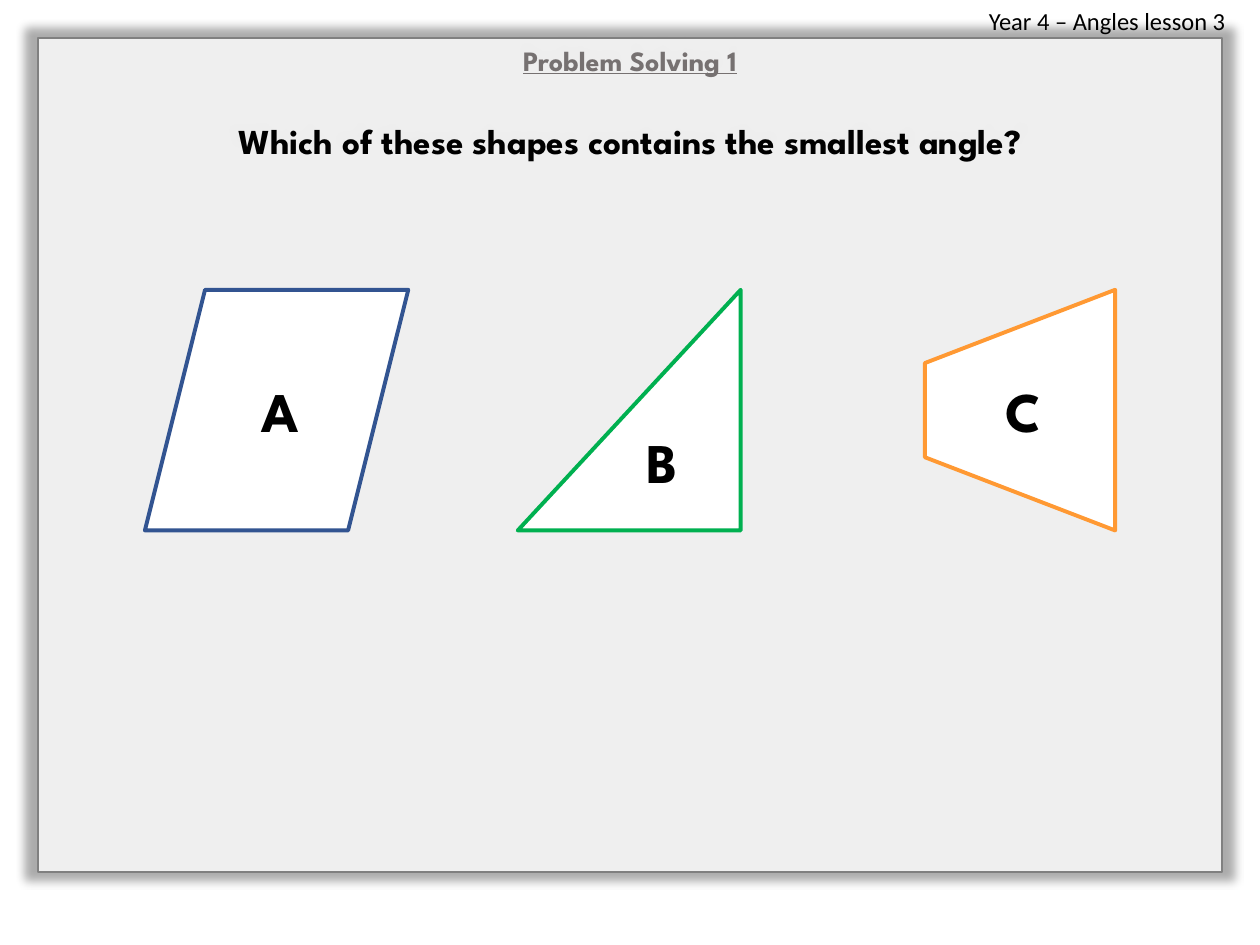
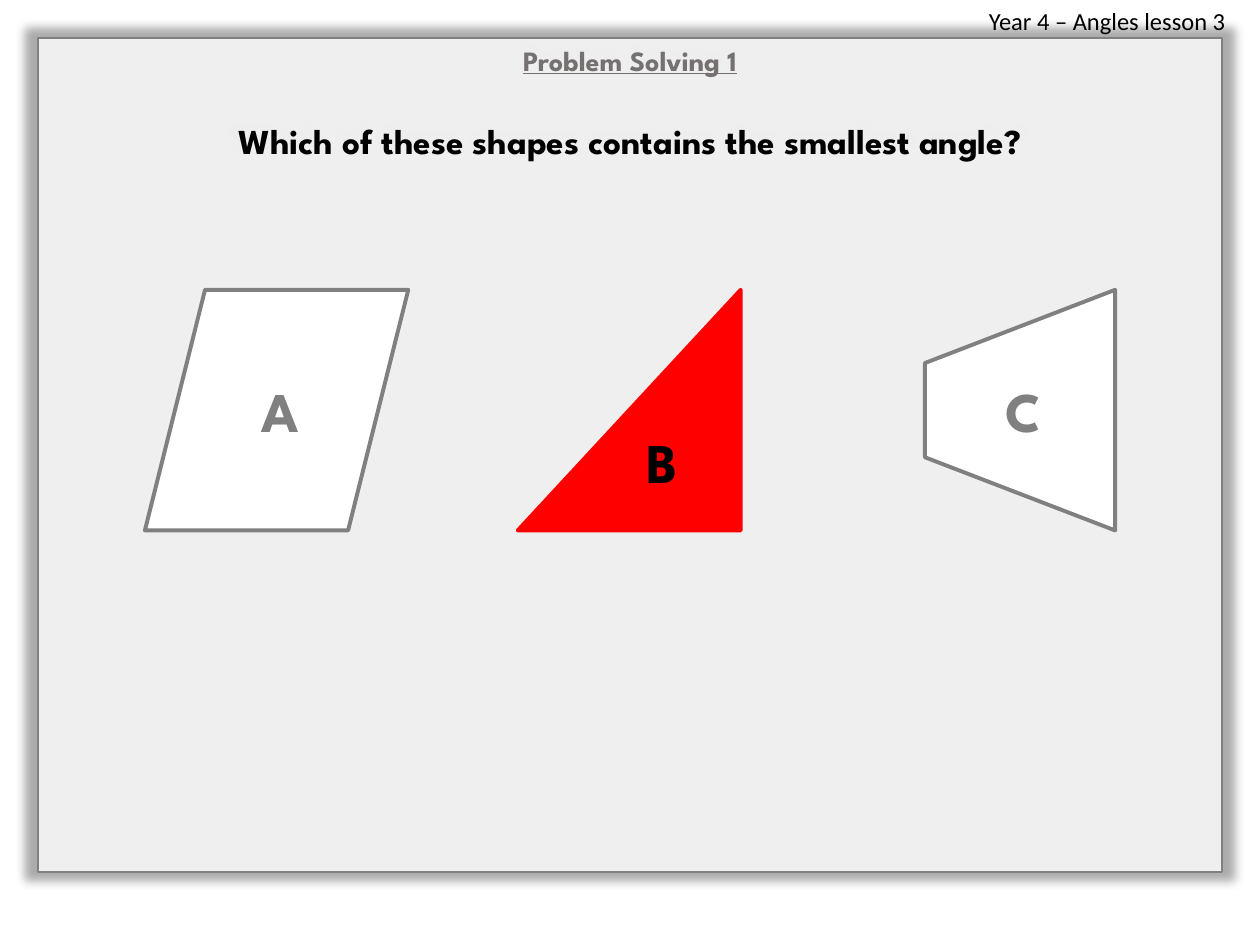
"""Build two angle slides: the question and its highlighted answer."""
import dataclasses

import pptx
import pptx.dml.color
import pptx.enum.dml
import pptx.enum.shapes
import pptx.enum.text
import pptx.oxml
import pptx.oxml.ns
import pptx.util

Pt = pptx.util.Pt
Kind = pptx.enum.shapes.MSO_SHAPE
Align = pptx.enum.text.PP_ALIGN
Anchor = pptx.enum.text.MSO_ANCHOR

LESSON = "Year 4 – Angles lesson 3"
TITLE = "Problem Solving 1"
QUESTION = "Which of these shapes contains the smallest angle?"


@dataclasses.dataclass(frozen=True)
class Theme:
    heading_font: str = "League Spartan"
    lesson_font: str = "Calibri"
    lesson_size: int = 14
    title_size: int = 16
    question_size: int = 20
    letter_size: int = 32
    black: str = "000000"
    white: str = "FFFFFF"
    grey: str = "808080"
    title_grey: str = "767171"
    blue: str = "325491"
    green: str = "00B050"
    orange: str = "FF9933"
    red: str = "FF0000"


@dataclasses.dataclass(frozen=True)
class Figure:
    letter: str
    kind: Kind
    left: float
    width: float
    letter_shift: tuple = (0, 0)
    rotation: int = 0
    flipped: bool = False
    adjustment: float | None = None


THEME = Theme()
FIGURES = [
    Figure("A", Kind.PARALLELOGRAM, 82.8, 150.5),
    Figure("B", Kind.RIGHT_TRIANGLE, 295.9, 127.4, letter_shift=(18, 29), flipped=True),
    Figure("C", Kind.TRAPEZOID, 528.5, 108.7, rotation=270, adjustment=0.385),
]
MUTED = (THEME.white, THEME.grey, THEME.grey)
SLIDES = [
    {
        "A": (THEME.white, THEME.blue, THEME.black),
        "B": (THEME.white, THEME.green, THEME.black),
        "C": (THEME.white, THEME.orange, THEME.black),
    },
    {"A": MUTED, "B": (THEME.red, THEME.red, THEME.black), "C": MUTED},
]

SLIDE_SIZE = (720, 540)
PANEL_BOX = (21.6, 21.6, 676.8, 476.6)
LESSON_BOX = (558, 0, 155.5, 24.5)
FIGURE_TOP, FIGURE_HEIGHT = 165.6, 137.5
LETTER_WIDTH, LETTER_HEIGHT = 31, 46
OUTLINE_WIDTH = 2.25
QUESTION_GAP = 24

SHADOW = (
    f'<a:effectLst {pptx.oxml.ns.nsdecls("a")}>'
    '<a:outerShdw blurRad="63500" sx="102000" sy="102000" algn="ctr" rotWithShape="0">'
    '<a:srgbClr val="000000"><a:alpha val="40000"/></a:srgbClr>'
    "</a:outerShdw></a:effectLst>"
)


def rgb(colour):
    return pptx.dml.color.RGBColor.from_string(colour)


def style(paragraph, text, font, size, colour, bold=True, underline=False, align=Align.CENTER):
    paragraph.text = text
    paragraph.alignment = align
    paragraph.font.name = font
    paragraph.font.size = Pt(size)
    paragraph.font.color.rgb = rgb(colour)
    paragraph.font.bold = bold
    paragraph.font.underline = underline


def add_shape(shapes, kind, box, fill, line, line_width):
    shape = shapes.add_shape(kind, *map(Pt, box))
    shape.shadow.inherit = False
    shape.fill.solid()
    shape.fill.fore_color.rgb = rgb(fill)
    shape.line.color.rgb = rgb(line)
    shape.line.width = Pt(line_width)
    return shape


def add_lesson(slide):
    frame = slide.shapes.add_textbox(*map(Pt, LESSON_BOX)).text_frame
    frame.word_wrap = True
    style(frame.paragraphs[0], LESSON, THEME.lesson_font, THEME.lesson_size,
          THEME.black, bold=False, align=Align.LEFT)


def add_panel(slide):
    panel = add_shape(slide.shapes, Kind.RECTANGLE, PANEL_BOX, THEME.white, THEME.grey, 1)
    colour = panel.element.spPr.find(".//" + pptx.oxml.ns.qn("a:srgbClr"))
    colour.append(pptx.oxml.parse_xml(f'<a:alpha {pptx.oxml.ns.nsdecls("a")} val="82000"/>'))
    effects = panel.element.spPr.find(pptx.oxml.ns.qn("a:effectLst"))
    panel.element.spPr.replace(effects, pptx.oxml.parse_xml(SHADOW))
    frame = panel.text_frame
    frame.word_wrap = True
    frame.vertical_anchor = Anchor.TOP
    style(frame.paragraphs[0], TITLE, THEME.heading_font, THEME.title_size,
          THEME.title_grey, underline=True)
    question = frame.add_paragraph()
    style(question, QUESTION, THEME.heading_font, THEME.question_size, THEME.black)
    question.space_before = Pt(QUESTION_GAP)


def add_figure(slide, figure, colours):
    fill, line, letter_colour = colours
    centre_x = figure.left + figure.width / 2
    centre_y = FIGURE_TOP + FIGURE_HEIGHT / 2
    width, height = figure.width, FIGURE_HEIGHT
    if figure.rotation % 180:
        width, height = height, width
    shapes = slide.shapes.add_group_shape().shapes
    box = (centre_x - width / 2, centre_y - height / 2, width, height)
    shape = add_shape(shapes, figure.kind, box, fill, line, OUTLINE_WIDTH)
    shape.rotation = figure.rotation
    if figure.flipped:
        shape.element.spPr.get_or_add_xfrm().set("flipH", "1")
    if figure.adjustment is not None:
        shape.adjustments[0] = figure.adjustment

    shift_x, shift_y = figure.letter_shift
    letter_box = (centre_x + shift_x - LETTER_WIDTH / 2, centre_y + shift_y - LETTER_HEIGHT / 2,
                  LETTER_WIDTH, LETTER_HEIGHT)
    frame = shapes.add_textbox(*map(Pt, letter_box)).text_frame
    frame.word_wrap = False
    frame.vertical_anchor = Anchor.MIDDLE
    style(frame.paragraphs[0], figure.letter, THEME.heading_font, THEME.letter_size, letter_colour)


def main():
    presentation = pptx.Presentation()
    presentation.slide_width, presentation.slide_height = map(Pt, SLIDE_SIZE)
    for colours in SLIDES:
        slide = presentation.slides.add_slide(presentation.slide_layouts[6])
        add_lesson(slide)
        add_panel(slide)
        for figure in FIGURES:
            add_figure(slide, figure, colours[figure.letter])
    presentation.save("out.pptx")


if __name__ == "__main__":
    main()
